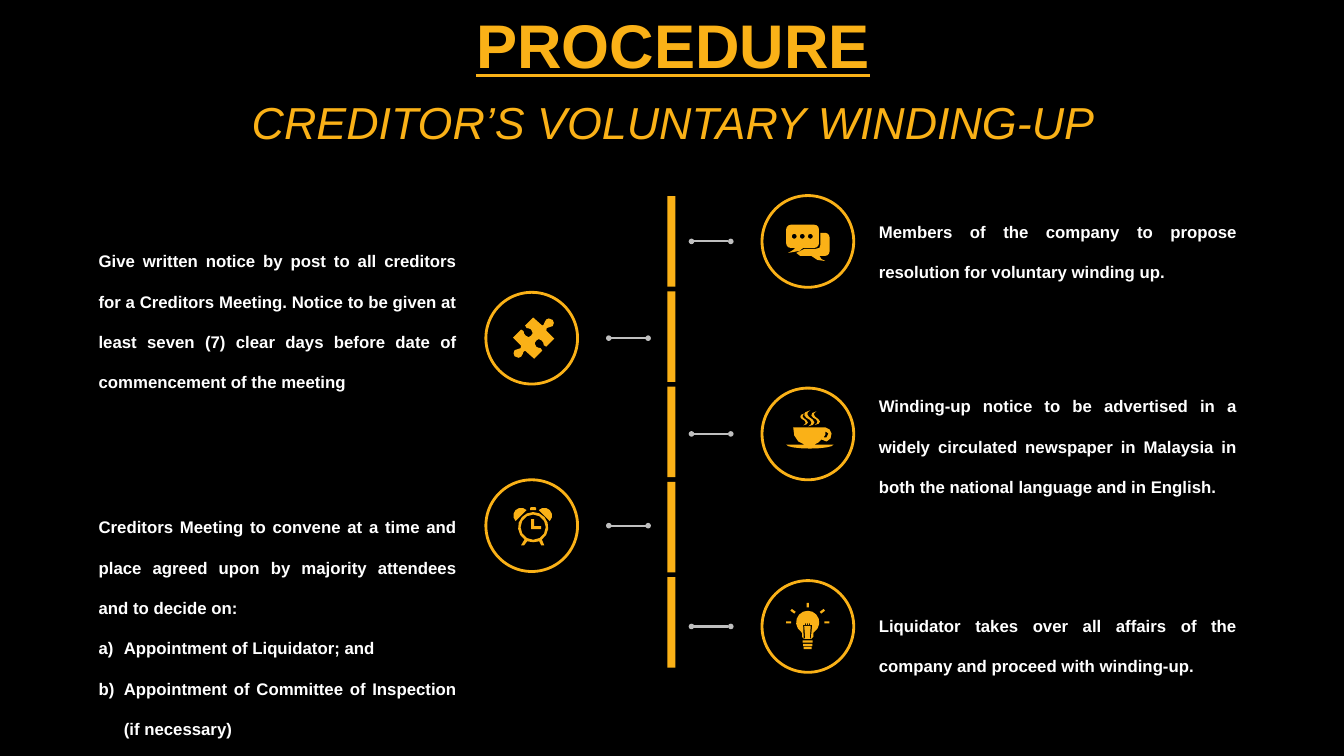
from math import cos, sin, radians
from pptx import Presentation
from pptx.dml.color import RGBColor
from pptx.enum.shapes import MSO_CONNECTOR as Conn, MSO_SHAPE as Kind
from pptx.enum.text import MSO_ANCHOR as Anchor, MSO_AUTO_SIZE as Auto, PP_ALIGN as Align
from pptx.oxml.ns import qn
from pptx.util import Inches, Pt
from lxml.etree import SubElement as Sub

GOLD = RGBColor(0xFA, 0xB1, 0x17)
BLACK = RGBColor(0, 0, 0)
WHITE = RGBColor(0xFF, 0xFF, 0xFF)
GREY = RGBColor(0xBF, 0xBF, 0xBF)

deck = Presentation()
deck.slide_width, deck.slide_height = Inches(40 / 3), Inches(7.5)
slide = deck.slides.add_slide(deck.slide_layouts[5])
slide.background.fill.solid()
slide.background.fill.fore_color.rgb = BLACK
shapes = slide.shapes


def paint(part):
    part.shadow.inherit = False
    part.fill.solid()
    part.fill.fore_color.rgb = GOLD
    part.line.fill.background()


def arc(x, y, rx, ry, start=0, end=360, count=12):
    turns = [radians(start + (end - start) * i / count) for i in range(count + 1)]
    return [(x + rx * cos(t), y + ry * sin(t)) for t in turns]


# Title in two lines
title = shapes.title
title.left, title.top, title.width, title.height = map(Inches, (0.35, 0.38, 12.66, 0.79))
frame = title.text_frame
frame.text = "PROCEDURE\nCREDITOR’S VOLUNTARY WINDING-UP"
frame.auto_size = Auto.NONE
frame.vertical_anchor = Anchor.MIDDLE
looks = [dict(size=Pt(44), bold=True, underline=True), dict(size=Pt(32), italic=True)]
for para, look in zip(frame.paragraphs, looks):
    para.alignment = Align.CENTER
    para.space_before = Pt(10)
    font = para.runs[0].font
    font.color.rgb = GOLD
    for key, value in dict(name="Arial", **look).items():
        setattr(font, key, value)

# Central bar in five pieces
for i in range(5):
    paint(shapes.add_shape(Kind.RECTANGLE, Inches(6.62), Inches(1.945 + 0.945 * i),
                           Inches(0.08), Inches(0.9)))

# Steps: side, ring top, text top, text height, paragraphs
LEFT = dict(text=0.88, ring=4.82, link=6.04)
RIGHT = dict(text=8.62, ring=7.56, link=6.86)
RING, LINK, WIDE = 0.91, 0.39, 3.75
steps = [
    (RIGHT, 1.94, 1.95, 0.91, ["Members of the company to propose resolution for voluntary winding up."]),
    (LEFT, 2.9, 2.24, 1.65, ["Give written notice by post to all creditors for a Creditors Meeting. "
                             "Notice to be given at least seven (7) clear days before date of "
                             "commencement of the meeting"]),
    (RIGHT, 3.85, 3.68, 1.25, ["Winding-up notice to be advertised in a widely circulated newspaper "
                               "in Malaysia in both the national language and in English."]),
    (LEFT, 4.76, 4.88, 2.52, ["Creditors Meeting to convene at a time and place agreed upon by "
                              "majority attendees and to decide on:",
                              "Appointment of Liquidator; and",
                              "Appointment of Committee of Inspection (if necessary)"]),
    (RIGHT, 5.76, 5.86, 0.85, ["Liquidator takes over all affairs of the company and proceed "
                               "with winding-up."]),
]
for side, top, head, tall, words in steps:
    ring = shapes.add_shape(Kind.OVAL, Inches(side["ring"]), Inches(top), Inches(RING), Inches(RING))
    paint(ring)
    ring.fill.background()
    ring.line.color.rgb = GOLD
    ring.line.width = Pt(2)

    mid = Inches(top + RING / 2)
    link = shapes.add_connector(Conn.STRAIGHT, Inches(side["link"]), mid,
                                Inches(side["link"] + LINK), mid)
    link.line.color.rgb = GREY
    link.line.width = Pt(1.5)
    for end in ("a:headEnd", "a:tailEnd"):
        Sub(link.line._get_or_add_ln(), qn(end), type="oval", w="sm", len="sm")
    Sub(link._element.spPr, qn("a:effectLst"))

    box = shapes.add_textbox(Inches(side["text"]), Inches(head), Inches(WIDE), Inches(tall))
    frame = box.text_frame
    frame.text = "\n".join(words)
    frame.word_wrap = True
    frame.auto_size = Auto.SHAPE_TO_FIT_TEXT
    for i, para in enumerate(frame.paragraphs):
        para.alignment = Align.JUSTIFY
        para.line_spacing = 2.0
        font = para.runs[0].font
        font.color.rgb = WHITE
        for key, value in dict(name="Arial", size=Pt(12), bold=True).items():
            setattr(font, key, value)
        if i:
            props = para._p.get_or_add_pPr()
            props.set("marL", str(Inches(0.25)))
            props.set("indent", str(-Inches(0.25)))
            Sub(props, qn("a:buAutoNum"), type="alphaLcParenR")

# Alarm clock: hands, dial, rim with feet, bells, knob
clock = [
    [(5.27, 5.15), (5.3, 5.15), (5.3, 5.22), (5.37, 5.22), (5.37, 5.25), (5.27, 5.25)],
    arc(5.29, 5.23, 0.125, 0.125),
    arc(5.29, 5.23, 0.15, 0.15, 125, 415) + [(5.4, 5.41), (5.37, 5.41), (5.35, 5.37), (5.29, 5.38),
                                             (5.23, 5.37), (5.2, 5.41), (5.17, 5.41)],
    arc(5.17, 5.115, 0.077, 0.077, 135, 315, 6),
    arc(5.4, 5.115, 0.077, 0.077, 225, 405, 6),
    [(5.26, 5.06), (5.26, 5.04), (5.27, 5.03), (5.31, 5.03), (5.32, 5.04), (5.32, 5.06)],
]

# Puzzle piece: half its outline, then the same half turned about the centre
half = [(19, -18), (20, -15), (19, -12), (16, -11), (13, -10), (12.5, -7.5), (20.5, 0.5),
        (12.5, 8.5), (10, 7), (9.5, 4.5), (8, 2.5), (5, 1), (2.5, 2.5), (1, 5), (2.5, 8.5),
        (4.5, 9.5), (7, 10), (8.5, 12.5), (0.5, 20.5), (-8.5, 12.5), (-10, 13.5),
        (-11, 16), (-12.5, 18.5), (-15, 19.5)]
puzzle = [[(5.295 + s * x / 100, 3.355 + s * y / 100) for s in (1, -1) for x, y in half]]

# Speech bubbles: three dots, back bubble, front bubble
R = 0.045
chat = [arc(x, 2.345, 0.025, 0.025, count=8) for x in (7.88, 7.96, 8.04)]
chat += [
    [(8.14, 2.31)] + arc(8.185, 2.355, R, R, 270, 360, 3) + arc(8.185, 2.495, R, R, 0, 90, 3)
    + [(8.13, 2.54), (8.15, 2.57), (8.19, 2.59), (8.11, 2.58), (8.05, 2.54), (7.94, 2.54),
       (7.9, 2.51), (7.98, 2.47), (8.09, 2.47), (8.13, 2.46), (8.14, 2.43)],
    arc(8.08, 2.275, R, R, 270, 360, 3) + arc(8.08, 2.415, R, R, 0, 90, 3)
    + [(7.97, 2.46), (7.93, 2.49), (7.82, 2.51), (7.87, 2.48), (7.89, 2.46)]
    + arc(7.845, 2.415, R, R, 90, 180, 3) + arc(7.845, 2.275, R, R, 180, 270, 3),
]

# Cup: hole in the handle, cup with saucer, steam
cup = [
    [(8.19, 4.28), (8.22, 4.3), (8.2, 4.34), (8.17, 4.34), (8.19, 4.31)],
    [(7.87, 4.24), (8.19, 4.24), (8.23, 4.26), (8.25, 4.3), (8.24, 4.35), (8.2, 4.38),
     (8.15, 4.36), (8.12, 4.39), (8.08, 4.41)] + arc(8.035, 4.41, 0.235, 0.04, 0, 180, 8)
    + [(7.98, 4.41), (7.92, 4.38), (7.88, 4.32)],
]
steam = [(6, 0), (3.5, 2), (3, 4), (4.5, 6.5), (8, 9), (10, 12), (8.5, 14.5), (4, 16),
         (6.5, 14), (7, 12), (5.5, 9.5), (2, 7.5), (0, 5), (1, 2)]
for x, y, size in [(7.94, 4.1, 0.75), (7.98, 4.07, 1), (8.05, 4.08, 0.85)]:
    cup.append([(x + size * a / 100, y + size * b / 100) for a, b in steam])

# Light bulb: filament, glass, base, rays
bulb = [
    [(7.975, 6.335), (7.97, 6.2)]
    + [(7.99 + 0.02 * i + x, y) for i in range(3)
       for x, y in [(0, 6.2), (0, 6.185), (0.01, 6.185), (0.01, 6.2)]]
    + [(8.06, 6.2), (8.045, 6.335), (8.035, 6.335), (8.045, 6.21), (7.98, 6.21), (7.99, 6.335)],
    arc(8.015, 6.175, 0.115, 0.115, 125, 415)
    + [(8.07, 6.28), (8.07, 6.32), (8.05, 6.34), (7.98, 6.34), (7.96, 6.32), (7.96, 6.28)],
]
for y, w in [(6.365, 0.05), (6.4, 0.045), (6.43, 0.04)]:
    bulb.append(arc(8.015, y, w, 0.014, 45, 405, 4))
    bulb[-1] = [(8.015 + s * w, y + t * 0.011) for s, t in [(-1, -1), (1, -1), (1, 1), (-1, 1)]]
for turn in (180, 220, 270, 320, 360):
    c, s = cos(radians(turn)), sin(radians(turn))
    bulb.append([(8.015 + r * c - w * s, 6.175 + 0.9 * (r * s + w * c))
                 for r, w in [(0.165, -0.012), (0.215, -0.012), (0.215, 0.012), (0.165, 0.012)]])

# Each icon is one outline, set upright about its centre and then turned
for rings, x, y, turn in [(clock, 5.29, 5.22, 0), (puzzle, 5.295, 3.355, 45),
                          (chat, 8.01, 2.41, 0), (cup, 8.03, 4.26, 0), (bulb, 8.015, 6.21, 270)]:
    c, s = cos(radians(-turn)), sin(radians(-turn))
    pen = None
    for ring in rings:
        dots = [(Inches(x + (a - x) * c - (b - y) * s), Inches(y + (a - x) * s + (b - y) * c))
                for a, b in ring]
        if pen:
            pen.move_to(*dots[0])
        else:
            pen = shapes.build_freeform(*dots[0])
        pen.add_line_segments(dots[1:])
    icon = pen.convert_to_shape()
    paint(icon)
    icon.rotation = turn

deck.save("out.pptx")
